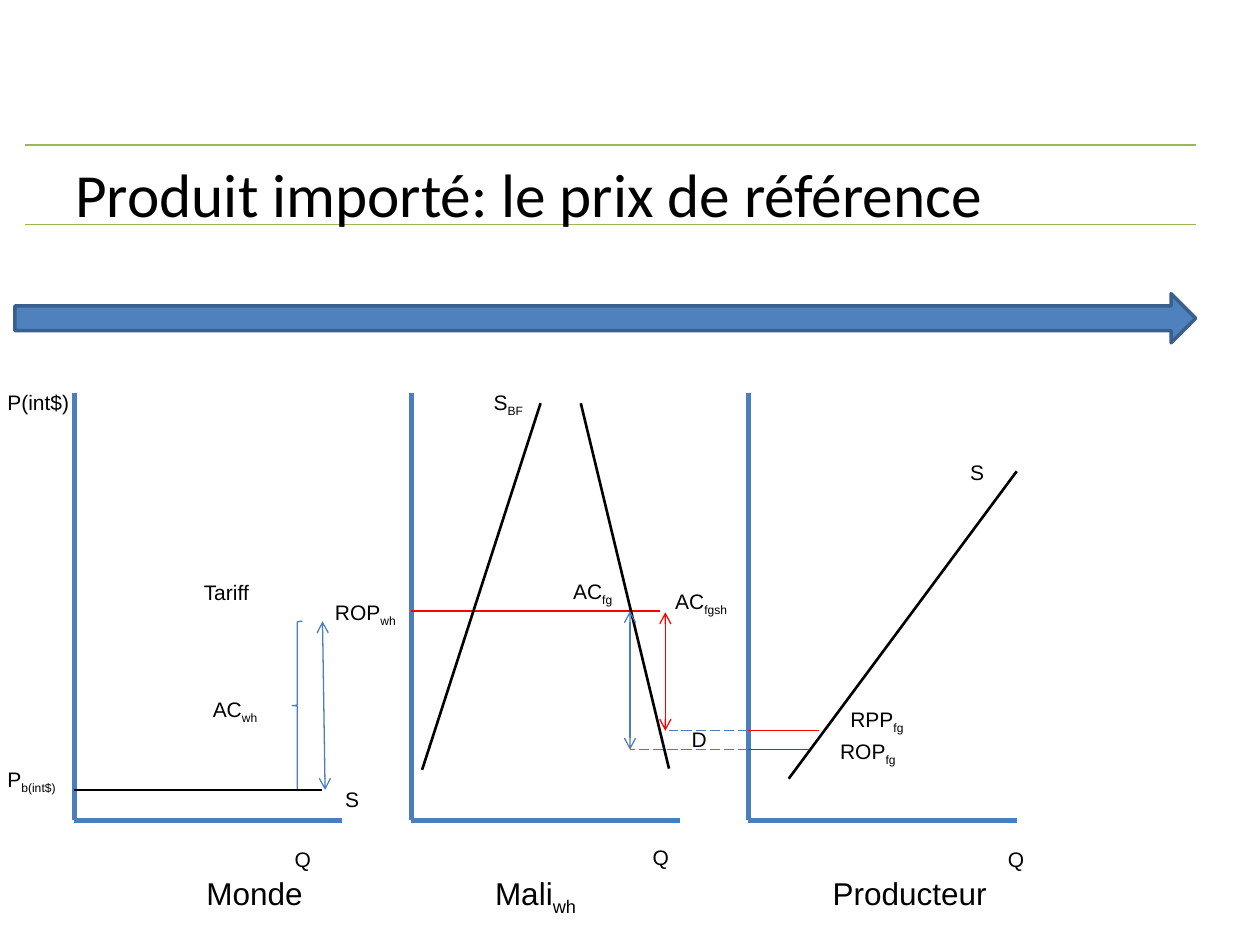
"""Build a slide on the reference price of an imported product along three markets."""
from dataclasses import dataclass
from typing import Optional

from pptx import Presentation
from pptx.dml.color import RGBColor
from pptx.enum.dml import MSO_LINE
from pptx.enum.shapes import MSO_CONNECTOR, MSO_SHAPE
from pptx.enum.text import MSO_ANCHOR, MSO_AUTO_SIZE
from pptx.oxml.ns import qn
from pptx.oxml.xmlchemy import OxmlElement
from pptx.util import Pt

COLORS = {
    "rule": "98B955",
    "blue": "4B7EBC",
    "arrow": "4F81BD",
    "arrow_edge": "3A5F8C",
    "black": "000000",
    "red": "FF0000",
}
AXIS_TOP, AXIS_BOTTOM, AXIS_WIDTH = 224.6, 468.7, 153.2
RULE_LEFT, RULE_RIGHT = 14.4, 683.3
WORLD_PRICE, TARIFF_PRICE, WHOLESALE_PRICE = 451.4, 355, 349.2
FARM_PRICE, PRODUCER_PRICE = 428.4, 417.6


@dataclass
class Label:
    left: float
    top: float
    width: float
    base: str
    subscript: str = ""
    size: float = 12
    height: float = 21.6


@dataclass
class Segment:
    x1: float
    y1: float
    x2: float
    y2: float
    color: str
    width: float = 0.75
    dash: Optional[MSO_LINE] = None
    two_headed: bool = False


@dataclass
class Market:
    axis: float
    caption: Label
    quantity: Label


def caption(left: float, width: float, base: str, subscript: str = "") -> Label:
    """Return a market caption on the shared bottom row."""
    return Label(left, 496.1, width, base, subscript, 18, 28.8)


MARKETS = [
    Market(42.5, caption(110.9, 69.8, "Monde"), Label(161.3, 480.2, 23.8, "Q")),
    Market(235.1, caption(275.8, 63.4, "Mali", "wh"), Label(365.8, 478.8, 23.8, "Q")),
    Market(427.7, caption(468.7, 103.7, "Producteur"), Label(568.8, 480.2, 23.8, "Q")),
]
WORLD, MALI, PRODUCER = (market.axis for market in MARKETS)

TITLE_RULES = [Segment(RULE_LEFT, y, RULE_RIGHT, y, "rule") for y in (128.2, 82.8)]
CURVES = [
    Segment(WORLD, WORLD_PRICE, 184.3, WORLD_PRICE, "black", 1.5),
    Segment(MALI, WHOLESALE_PRICE, 377.3, WHOLESALE_PRICE, "red"),
    Segment(331.9, 230.4, 382.3, 439.2, "black", 1.5),
    Segment(241.2, 439.9, 308.9, 230.4, "black", 1.5),
    Segment(450.7, 445, 581, 269.3, "black", 1.5),
]
PRICE_LINES = [
    Segment(PRODUCER, FARM_PRICE, 462.2, FARM_PRICE, "red"),
    Segment(PRODUCER, FARM_PRICE, 360, FARM_PRICE, "blue", dash=MSO_LINE.LONG_DASH),
    Segment(PRODUCER, PRODUCER_PRICE, 382.3, PRODUCER_PRICE, "blue", dash=MSO_LINE.LONG_DASH),
    Segment(PRODUCER, PRODUCER_PRICE, 468, PRODUCER_PRICE, "red"),
]
ACCESS_COSTS = [
    Segment(185.8, WORLD_PRICE, 184.3, TARIFF_PRICE, "blue", two_headed=True),
    Segment(360, FARM_PRICE, 360, WHOLESALE_PRICE, "blue", two_headed=True),
    Segment(380.2, PRODUCER_PRICE, 380.2, 349.9, "red", two_headed=True),
]
LABELS = [
    Label(-2.9, 218.9, 50.4, "P(int$)"),
    Label(-2.9, 434.2, 45.4, "P", "b(int$)"),
    Label(109.4, 327.6, 40.3, "Tariff"),
    Label(114.5, 394.6, 41.8, "AC", "wh"),
    Label(184.3, 339.1, 51.1, "ROP", "wh"),
    Label(320.4, 326.9, 38.2, "AC", "fg"),
    Label(275, 218.9, 33.1, "S", "BF"),
    Label(190.1, 445.7, 22.3, "S"),
    Label(473, 418.3, 47.5, "ROP", "fg"),
    Label(388.1, 411.8, 23, "D"),
    Label(547.2, 259.2, 22.3, "S"),
    Label(378.7, 332.6, 46.8, "AC", "fgsh"),
    Label(478.8, 400.3, 46.1, "RPP", "fg"),
]


def rgb(name: str) -> RGBColor:
    """Look up a named colour."""
    return RGBColor.from_string(COLORS[name])


def add_run(paragraph, text: str, font: str, size: float):
    """Append a black run and return it."""
    run = paragraph.add_run()
    run.text = text
    run.font.name = font
    run.font.size = Pt(size)
    run.font.color.rgb = rgb("black")
    return run


def draw_label(slide, label: Label) -> None:
    """Draw a label with its optional subscript."""
    box = slide.shapes.add_textbox(
        Pt(label.left), Pt(label.top), Pt(label.width), Pt(label.height))
    frame = box.text_frame
    frame.word_wrap = False
    frame.auto_size = MSO_AUTO_SIZE.SHAPE_TO_FIT_TEXT
    paragraph = frame.paragraphs[0]
    add_run(paragraph, label.base, "Arial", label.size)
    if label.subscript:
        subscript = add_run(paragraph, label.subscript, "Arial", label.size)
        subscript._r.get_or_add_rPr().set("baseline", "-25000")


def draw_segment(slide, segment: Segment) -> None:
    """Draw a straight line, dashed or two-headed where asked."""
    connector = slide.shapes.add_connector(
        MSO_CONNECTOR.STRAIGHT,
        Pt(segment.x1), Pt(segment.y1), Pt(segment.x2), Pt(segment.y2))
    connector.line.color.rgb = rgb(segment.color)
    connector.line.width = Pt(segment.width)
    if segment.dash is not None:
        connector.line.dash_style = segment.dash
    properties = connector._element.spPr
    if segment.two_headed:
        for tag in ("a:headEnd", "a:tailEnd"):
            end = OxmlElement(tag)
            end.set("type", "arrow")
            properties.find(qn("a:ln")).append(end)
    properties.append(OxmlElement("a:effectLst"))


def draw_market(slide, market: Market) -> None:
    """Draw the axes, caption and quantity label of a market."""
    left = market.axis
    draw_segment(slide, Segment(left, AXIS_TOP, left, AXIS_BOTTOM, "blue", 3))
    draw_segment(slide, Segment(left, AXIS_BOTTOM, left + AXIS_WIDTH, AXIS_BOTTOM, "blue", 3))
    draw_label(slide, market.caption)
    draw_label(slide, market.quantity)


def draw_title(slide, text: str) -> None:
    """Draw the slide title."""
    frame = slide.shapes.add_textbox(Pt(36), Pt(84.2), Pt(648), Pt(43.9)).text_frame
    frame.word_wrap = True
    frame.vertical_anchor = MSO_ANCHOR.TOP
    frame.margin_top = Pt(5)
    add_run(frame.paragraphs[0], text, "Calibri", 35)


def draw_chain_arrow(slide) -> None:
    """Draw the wide arrow running along the three markets."""
    arrow = slide.shapes.add_shape(
        MSO_SHAPE.RIGHT_ARROW, Pt(8.6), Pt(167.8), Pt(674.7), Pt(28.1))
    arrow.shadow.inherit = False
    arrow.fill.solid()
    arrow.fill.fore_color.rgb = rgb("arrow")
    arrow.line.color.rgb = rgb("arrow_edge")
    arrow.line.width = Pt(2)


def draw_tariff_brace(slide) -> None:
    """Draw the brace between the world price and the price with tariff."""
    brace = slide.shapes.add_shape(
        MSO_SHAPE.LEFT_BRACE, Pt(167), Pt(TARIFF_PRICE), Pt(5.8), Pt(WORLD_PRICE - TARIFF_PRICE))
    brace.shadow.inherit = False
    brace.fill.background()
    brace.line.color.rgb = rgb("blue")
    brace.line.width = Pt(0.75)


def main() -> None:
    """Build and save the slide."""
    deck = Presentation()
    deck.slide_width, deck.slide_height = Pt(720), Pt(540)
    slide = deck.slides.add_slide(deck.slide_layouts[6])
    for rule in TITLE_RULES:
        draw_segment(slide, rule)
    draw_title(slide, "Produit importé: le prix de référence")
    draw_chain_arrow(slide)
    for market in MARKETS:
        draw_market(slide, market)
    draw_tariff_brace(slide)
    for segment in CURVES + PRICE_LINES + ACCESS_COSTS:
        draw_segment(slide, segment)
    for label in LABELS:
        draw_label(slide, label)
    deck.save("out.pptx")


if __name__ == "__main__":
    main()
